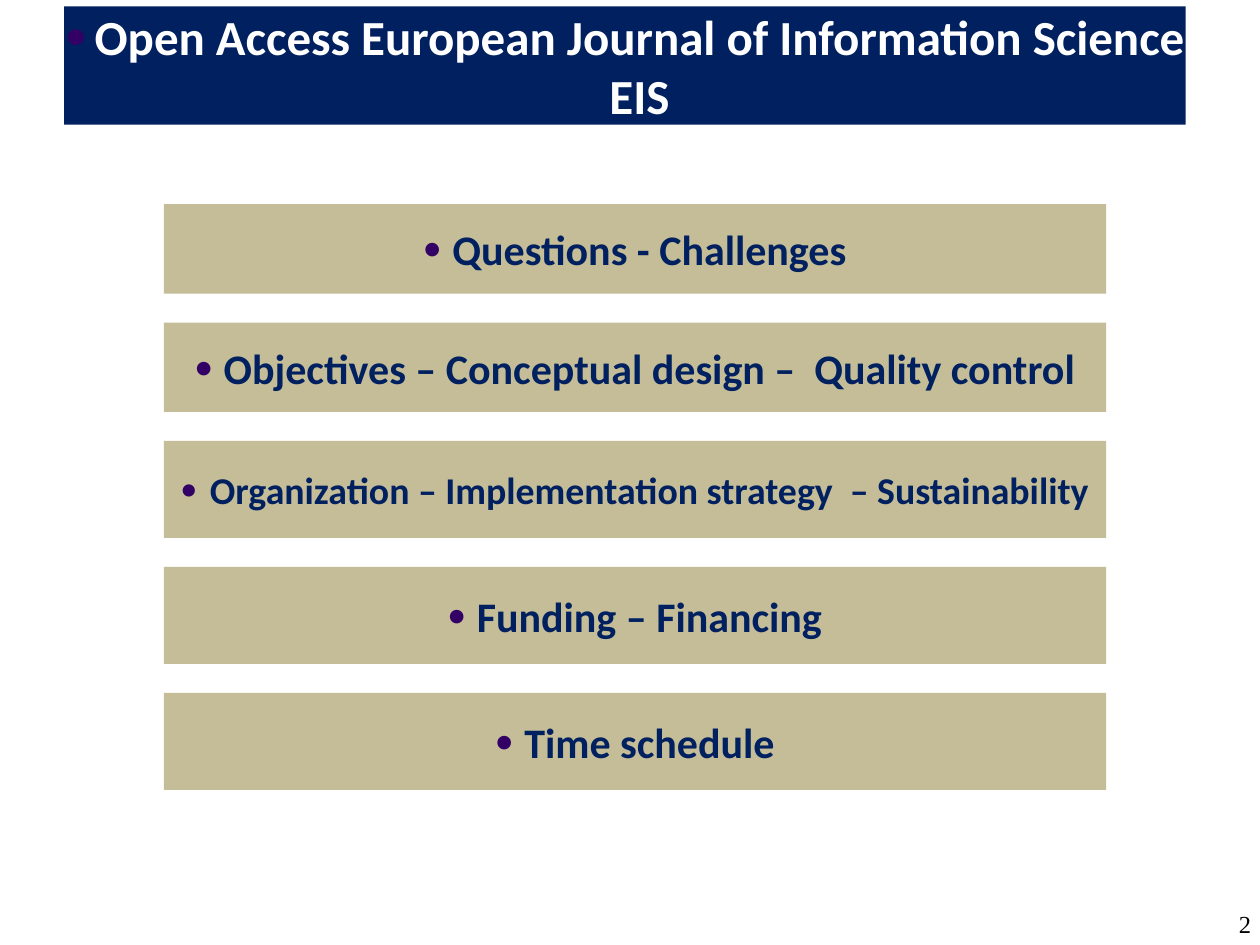
from lxml.etree import SubElement
from pptx import Presentation
from pptx.dml.color import RGBColor
from pptx.enum.shapes import MSO_SHAPE as SHAPE
from pptx.enum.text import MSO_ANCHOR as ANCHOR, MSO_AUTO_SIZE as AUTO, PP_ALIGN as ALIGN
from pptx.oxml.ns import qn
from pptx.util import Inches, Pt

NAVY, SAND, PURPLE, WHITE, BLACK = "002060", "C4BD97", "330066", "FFFFFF", "000000"

# text, bar height, font size
TOPICS = [
    ("Questions - Challenges", 0.71, 24),
    ("Objectives – Conceptual design –  Quality control", 0.71, 24),
    ("Organization – Implementation strategy  – Sustainability", 0.77, 21.6),
    ("Funding – Financing", 0.77, 24),
    ("Time schedule", 0.77, 24),
]
TOPIC_LEFT, TOPIC_TOP, TOPIC_WIDTH, TOPIC_GAP = 1.3, 1.62, 7.48, 0.23


def rgb(value):
    return RGBColor.from_string(value)


class AgendaSlide:
    font = "Calibri"
    hang = Inches(0.23)

    def __init__(self, prs):
        self.slide = prs.slides.add_slide(prs.slide_layouts[5])

    def add_bullet(self, p):
        pPr = p._p.get_or_add_pPr()
        pPr.set("marL", str(self.hang))
        pPr.set("indent", str(-self.hang))
        color = SubElement(pPr, qn("a:buClr"))
        SubElement(color, qn("a:srgbClr"), val=PURPLE)
        SubElement(pPr, qn("a:buSzPct"), val="70000")
        SubElement(pPr, qn("a:buFont"), typeface=self.font)
        SubElement(pPr, qn("a:buChar"), char="●")

    def set_text(self, sp, text, size, color, font, align, anchor, bold=False):
        tf = sp.text_frame
        tf.text = text
        tf.word_wrap = True
        tf.auto_size = AUTO.NONE
        tf.vertical_anchor = anchor
        tf.margin_left = tf.margin_right = tf.margin_top = tf.margin_bottom = 0
        p = tf.paragraphs[0]
        p.alignment = align
        f = p.runs[0].font
        f.name, f.size, f.bold = font, Pt(size), bold
        f.color.rgb = rgb(color)
        return p

    def fill_bar(self, sp, text, size, fill, color):
        sp.fill.solid()
        sp.fill.fore_color.rgb = rgb(fill)
        sp.line.fill.background()
        p = self.set_text(sp, text, size, color, self.font, ALIGN.CENTER, ANCHOR.MIDDLE, bold=True)
        p.line_spacing = 1.0
        p.space_before = Pt(7)
        self.add_bullet(p)

    def title(self, text, left, top, width, height):
        sp = self.slide.shapes.title
        sp.left, sp.top = Inches(left), Inches(top)
        sp.width, sp.height = Inches(width), Inches(height)
        self.fill_bar(sp, text, 28, NAVY, WHITE)

    def topic(self, text, size, left, top, width, height):
        sp = self.slide.shapes.add_shape(
            SHAPE.RECTANGLE, Inches(left), Inches(top), Inches(width), Inches(height))
        sp.shadow.inherit = False
        self.fill_bar(sp, text, size, SAND, NAVY)

    def page_number(self, text, left, top, width, height):
        sp = self.slide.shapes.add_textbox(
            Inches(left), Inches(top), Inches(width), Inches(height))
        self.set_text(sp, text, 14, BLACK, "Times New Roman", ALIGN.RIGHT, ANCHOR.BOTTOM)
        sp.text_frame.margin_bottom = Inches(0.05)


def main():
    prs = Presentation()
    prs.slide_width, prs.slide_height = Inches(10), Inches(7.5)
    agenda = AgendaSlide(prs)
    agenda.title("Open Access European Journal of Information Science EIS", 0.51, 0.05, 8.9, 0.94)
    top = TOPIC_TOP
    for text, height, size in TOPICS:
        agenda.topic(text, size, TOPIC_LEFT, top, TOPIC_WIDTH, height)
        top += height + TOPIC_GAP
    agenda.page_number("2", 9.25, 6.98, 0.68, 0.52)
    prs.save("out.pptx")


if __name__ == "__main__":
    main()
